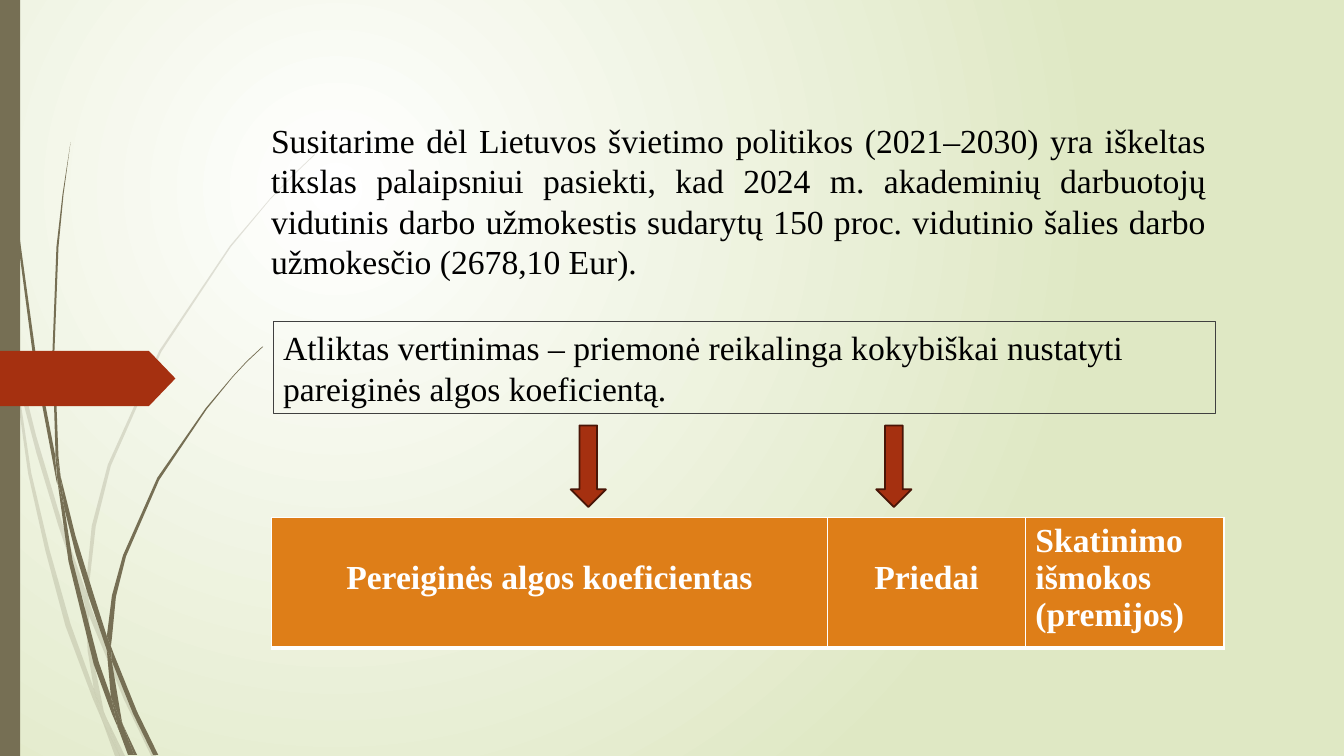
from lxml.etree import SubElement
from pptx import Presentation
from pptx.dml.color import RGBColor
from pptx.enum.shapes import MSO_SHAPE
from pptx.enum.text import MSO_ANCHOR, PP_ALIGN
from pptx.oxml.ns import qn
from pptx.util import Inches, Pt

WHITE = RGBColor(0xFF, 0xFF, 0xFF)
BLACK = RGBColor(0, 0, 0)
PALE_GREEN = RGBColor(0xDF, 0xE8, 0xC4)
OLIVE = RGBColor(0x76, 0x6F, 0x54)
RUST = RGBColor(0xA5, 0x30, 0x10)
DARK_RUST = RGBColor(0x48, 0x15, 0x07)
FRAME_GREY = RGBColor(0x40, 0x40, 0x40)
ORANGE = RGBColor(0xDE, 0x7E, 0x18)
FONT = "Times New Roman"

PALE_BLADES = [
    [(0.11, 3.5), (0.09, 3.22), (0, 2.82), (0, 2.99), (0.1, 3.44)],
    [(0.58, 5.22), (0.84, 5.99), (0.85, 5.86), (0.62, 5.2), (0.36, 4.33),
     (0.14, 3.45), (0.17, 3.76), (0.36, 4.49)],
    [(0.92, 6.07), (0.88, 5.96), (0.88, 6.1), (1.23, 6.94), (1.5, 7.5),
     (1.55, 7.5), (1.27, 6.92)],
    [(1.19, 7.5), (1.24, 7.5), (1.05, 7.11)],
    [(0.93, 6.83), (0.7, 6.19), (0.49, 5.45), (0.31, 4.69), (0.17, 3.76), (0.11, 3.5),
     (0.28, 4.7), (0.45, 5.46), (0.65, 6.21), (0.92, 6.93), (1.01, 7.14), (0.99, 7.07)],
    [(0.84, 5.99), (0.87, 6.46), (0.93, 6.83), (0.96, 6.92), (1.05, 7.11),
     (1.03, 7.06), (0.91, 6.46), (0.88, 6.1), (0.88, 6.08)],
    [(0.88, 5.84), (0.95, 5.22), (1.1, 4.62), (1.6, 3.49), (2.29, 2.45), (2.68, 1.98),
     (2.9, 1.75), (3.12, 1.54), (3.12, 1.53), (2.89, 1.75), (2.68, 1.97), (2.28, 2.44),
     (1.58, 3.48), (1.07, 4.61), (0.91, 5.22), (0.85, 5.84), (0.85, 5.86), (0.88, 5.96)],
    [(1.01, 7.14), (1.14, 7.5), (1.19, 7.5)],
    [(0.88, 6.08), (0.88, 6.1), (0.88, 5.96), (0.85, 5.86), (0.84, 5.99)],
    [(0.96, 6.92), (0.93, 6.83), (0.99, 7.07), (1.01, 7.14), (1.19, 7.5), (1.05, 7.11)],
]
DARK_BLADES = [
    [(0.07, 1.1), (0.17, 2.33), (0.33, 3.55), (0.56, 4.77), (0.57, 4.81), (0.55, 4.57),
     (0.55, 4.53), (0.36, 3.55), (0.19, 2.32), (0.08, 1.09), (0.05, 0.48), (0.04, 0),
     (0.03, 0), (0.04, 0.48)],
    [(0.88, 5.92), (1.06, 6.45), (1.06, 6.31), (0.93, 5.9), (0.75, 5.32), (0.6, 4.72),
     (0.64, 5.05), (0.75, 5.49)],
    [(1.13, 6.49), (1.1, 6.41), (1.11, 6.56), (1.32, 7.08), (1.52, 7.49),
     (1.57, 7.49), (1.36, 7.06)],
    [(1.1, 6.91), (0.98, 6.57), (0.72, 5.56), (0.64, 5.05), (0.57, 4.77), (0.68, 5.57),
     (0.93, 6.59), (1.11, 7.08), (1.17, 7.22), (1.16, 7.17)],
    [(0.6, 4.72), (0.58, 4.53), (0.54, 3.49), (0.58, 2.45), (0.63, 1.93), (0.7, 1.41),
     (0.62, 1.93), (0.56, 2.45), (0.52, 3.49), (0.55, 4.49)],
    [(1.33, 7.49), (1.36, 7.49), (1.22, 7.19)],
    [(0.57, 4.77), (0.64, 5.05), (0.6, 4.72), (0.55, 4.49), (0.55, 4.53)],
    [(1.11, 6.33), (1.15, 5.92), (1.25, 5.52), (1.58, 4.76), (2.05, 4.06), (2.31, 3.74),
     (2.45, 3.59), (2.61, 3.44), (2.6, 3.44), (2.45, 3.58), (2.31, 3.73), (2.04, 4.05),
     (1.56, 4.74), (1.22, 5.51), (1.11, 5.91), (1.06, 6.31), (1.1, 6.41)],
    [(1.17, 7.22), (1.27, 7.49), (1.31, 7.49)],
    [(1.06, 6.45), (1.1, 6.91), (1.16, 7.06), (1.22, 7.19), (1.21, 7.16),
     (1.11, 6.56), (1.09, 6.51)],
    [(1.06, 6.45), (1.09, 6.51), (1.11, 6.56), (1.1, 6.41), (1.06, 6.31)],
    [(1.16, 7.06), (1.1, 6.91), (1.16, 7.17), (1.17, 7.22), (1.3, 7.49),
     (1.33, 7.49), (1.22, 7.19)],
]
AGREEMENT = (
    "Susitarime dėl Lietuvos švietimo politikos (2021–2030) yra iškeltas tikslas "
    "palaipsniui pasiekti, kad 2024 m. akademinių darbuotojų vidutinis darbo "
    "užmokestis sudarytų 150 proc. vidutinio šalies darbo užmokesčio (2678,10 Eur)."
)
ASSESSMENT = [
    "Atliktas vertinimas – priemonė reikalinga kokybiškai nustatyti",
    "pareiginės algos koeficientą.",
]
PAY_PARTS = [
    ("Pereiginės algos koeficientas", 5.52, PP_ALIGN.CENTER, 0.42),
    ("Priedai", 1.96, PP_ALIGN.CENTER, 0.42),
    ("Skatinimo išmokos (premijos)", 1.97, PP_ALIGN.LEFT, 0.05),
]


def paint_background(slide):
    """Fill the background with a glow centred in the upper left."""
    fill = slide.background.fill
    fill.gradient()
    for stop, color in zip(fill.gradient_stops, (WHITE, PALE_GREEN)):
        stop.color.rgb = color
    gradient = next(slide.element.iter(qn("a:gradFill")))
    gradient.remove(gradient.find(qn("a:lin")))
    glow = SubElement(gradient, qn("a:path"), path="circle")
    SubElement(glow, qn("a:fillToRect"), l="50000", t="50000", r="100000", b="100000")


def style_shape(shape, fill=None, line=None, width=0):
    """Set the fill and outline of a shape and drop its shadow."""
    shape.shadow.inherit = False
    if fill is None:
        shape.fill.background()
    else:
        shape.fill.solid()
        shape.fill.fore_color.rgb = fill
    if line is None:
        shape.line.fill.background()
    else:
        shape.line.color.rgb = line
        shape.line.width = Pt(width)


def add_blade(slide, points, opacity):
    """Draw one piece of grass from its outline points."""
    outline = [(Inches(x), Inches(y)) for x, y in points]
    builder = slide.shapes.build_freeform(*outline[0])
    builder.add_line_segments(outline[1:], close=True)
    blade = builder.convert_to_shape()
    style_shape(blade, OLIVE)
    if opacity < 100:
        color = next(blade.element.spPr.iter(qn("a:srgbClr")))
        SubElement(color, qn("a:alpha"), val=str(opacity * 1000))


def add_preset(slide, kind, box, *style):
    """Add a styled preset shape in the given box."""
    shape = slide.shapes.add_shape(kind, *map(Inches, box))
    style_shape(shape, *style)
    return shape


def add_decoration(slide):
    """Draw the grass, the side strip and the page marker."""
    for blades, opacity in ((PALE_BLADES, 20), (DARK_BLADES, 100)):
        for points in blades:
            add_blade(slide, points, opacity)
    add_preset(slide, MSO_SHAPE.RECTANGLE, (0, 0, 0.2, 7.5), OLIVE)
    marker = add_preset(slide, MSO_SHAPE.PENTAGON, (0, 3.48, 1.74, 0.55), RUST)
    marker.adjustments[0] = 0.48


def write_paragraphs(frame, texts, align, color=BLACK, bold=False):
    """Write each text as one formatted paragraph."""
    frame.word_wrap = True
    for index, text in enumerate(texts):
        paragraph = frame.add_paragraph() if index else frame.paragraphs[0]
        paragraph.text = text
        paragraph.alignment = align
        paragraph.font.name = FONT
        paragraph.font.size = Pt(24)
        paragraph.font.bold = bold
        paragraph.font.color.rgb = color


def add_agreement(slide, box):
    """Add the justified opening statement."""
    frame = slide.shapes.add_textbox(*map(Inches, box)).text_frame
    write_paragraphs(frame, [AGREEMENT], PP_ALIGN.JUSTIFY)


def add_assessment(slide, box):
    """Add the framed assessment statement."""
    frame = add_preset(slide, MSO_SHAPE.RECTANGLE, box, None, FRAME_GREY, 0.75).text_frame
    frame.vertical_anchor = MSO_ANCHOR.MIDDLE
    write_paragraphs(frame, ASSESSMENT, PP_ALIGN.LEFT)


def add_borders(cell):
    """Give a cell white borders with a thick bottom edge."""
    properties = cell._tc.get_or_add_tcPr()
    for side, width in (("L", 1), ("R", 1), ("T", 1), ("B", 3)):
        border = SubElement(properties, qn(f"a:ln{side}"), w=str(Pt(width)))
        solid = SubElement(border, qn("a:solidFill"))
        SubElement(solid, qn("a:srgbClr"), val=str(WHITE))


def add_pay_table(slide, box):
    """Add the one-row table of pay components."""
    table = slide.shapes.add_table(1, len(PAY_PARTS), *map(Inches, box)).table
    for column, (label, width, align, top_margin) in enumerate(PAY_PARTS):
        table.columns[column].width = Inches(width)
        cell = table.cell(0, column)
        add_borders(cell)
        cell.fill.solid()
        cell.fill.fore_color.rgb = ORANGE
        cell.margin_top = Inches(top_margin)
        write_paragraphs(cell.text_frame, [label], align, WHITE, bold=True)


def main():
    """Build the slide and save it."""
    presentation = Presentation()
    presentation.slide_width = Inches(13.33)
    presentation.slide_height = Inches(7.5)
    slide = presentation.slides.add_slide(presentation.slide_layouts[6])
    paint_background(slide)
    add_decoration(slide)
    add_agreement(slide, (2.59, 1.14, 9.47, 1.72))
    add_pay_table(slide, (2.69, 5.13, 9.44, 1.3))
    for left in (5.66, 8.69):
        add_preset(slide, MSO_SHAPE.DOWN_ARROW, (left, 4.22, 0.35, 0.81),
                   RUST, DARK_RUST, 1.25)
    add_assessment(slide, (2.71, 3.19, 9.35, 0.91))
    presentation.save("out.pptx")


if __name__ == "__main__":
    main()
